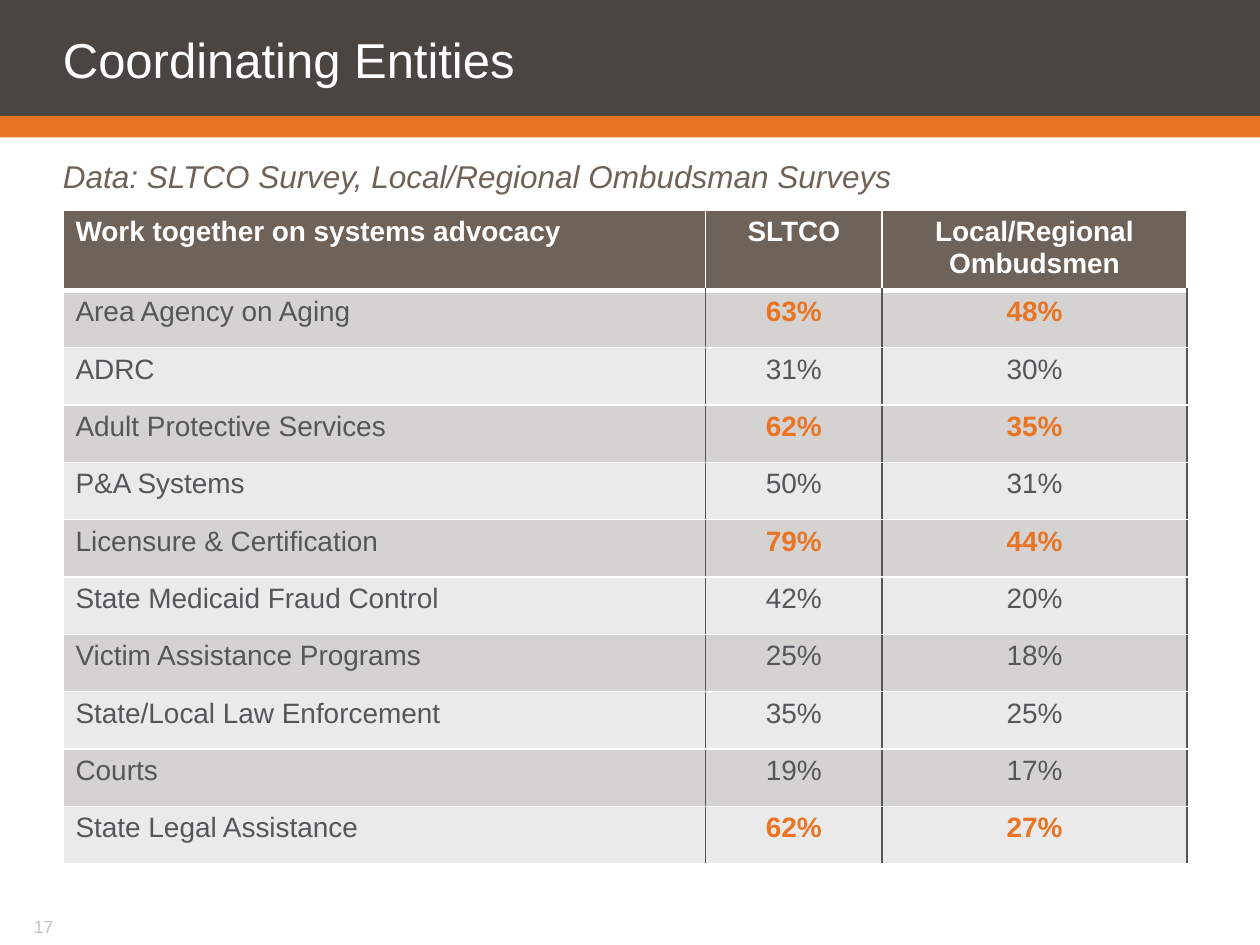
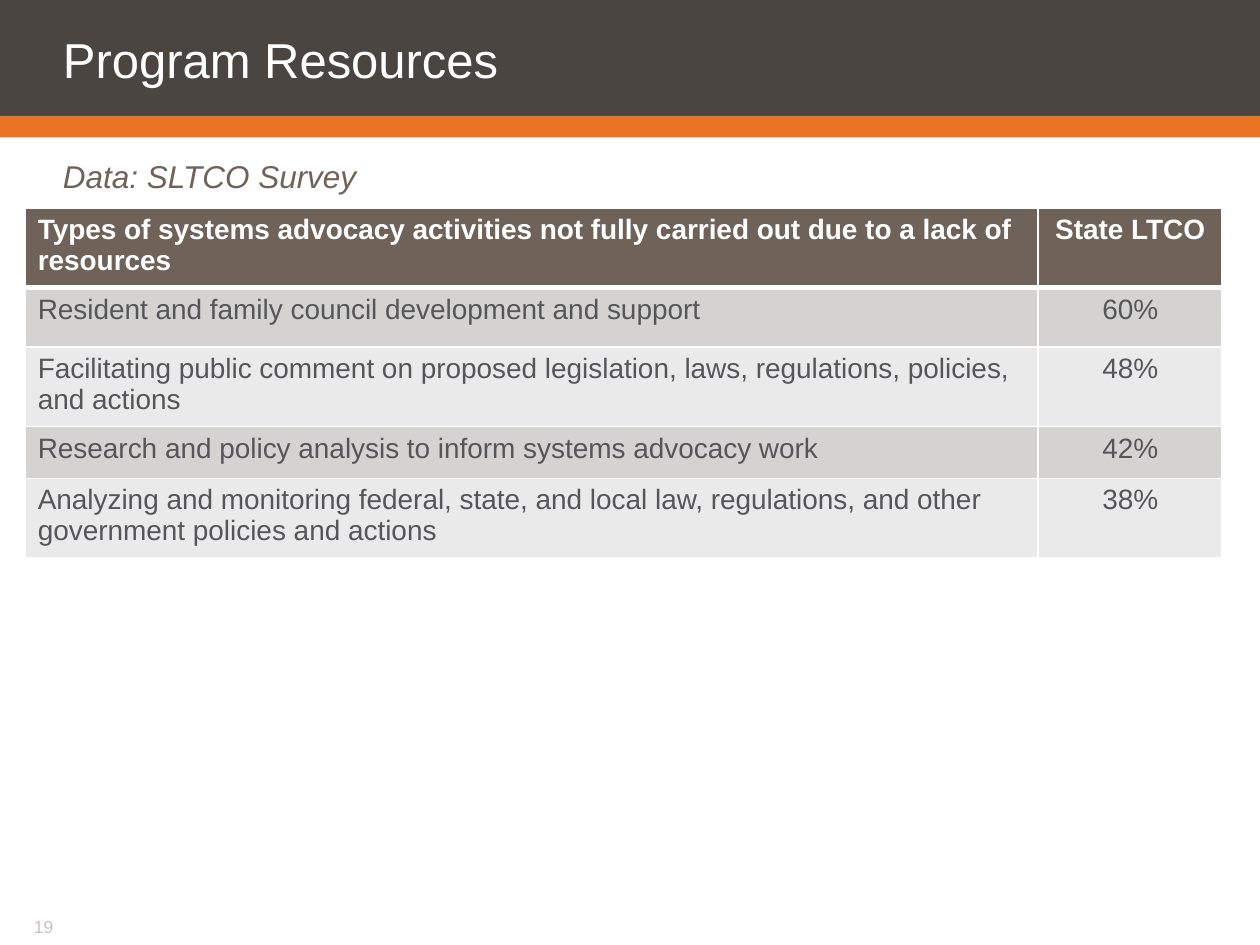
import pptx
import pptx.dml.color
import pptx.enum.shapes
import pptx.enum.text
import pptx.oxml.ns
import pptx.util
from lxml import etree

Inches = pptx.util.Inches
Pt = pptx.util.Pt
FONT = "Arial"
COLORS = {
    "title_band": "4A4541",
    "accent": "E87424",
    "header": "6E6259",
    "body_text": "55565A",
    "odd_row": "D5D3D1",
    "even_row": "EBEAEA",
    "page_number": "C8C2BF",
    "white": "FFFFFF",
}

ENTITIES_HEADER = ("Work together on systems advocacy", "SLTCO", "Local/Regional Ombudsmen")
ENTITIES = [
    ("Area Agency on Aging", "63%", "48%"),
    ("ADRC", "31%", "30%"),
    ("Adult Protective Services", "62%", "35%"),
    ("P&A Systems", "50%", "31%"),
    ("Licensure & Certification", "79%", "44%"),
    ("State Medicaid Fraud Control", "42%", "20%"),
    ("Victim Assistance Programs", "25%", "18%"),
    ("State/Local Law Enforcement", "35%", "25%"),
    ("Courts", "19%", "17%"),
    ("State Legal Assistance", "62%", "27%"),
]
HIGHLIGHTED_ENTITIES = {
    "Area Agency on Aging",
    "Adult Protective Services",
    "Licensure & Certification",
    "State Legal Assistance",
}

RESOURCES_HEADER = (
    "Types of systems advocacy activities not fully carried out due to a lack of resources",
    "State LTCO",
)
RESOURCES = [
    ("Resident and family council development and support", "60%"),
    ("Facilitating public comment on proposed legislation, laws, regulations, policies, "
     "and actions", "48%"),
    ("Research and policy analysis to inform systems advocacy work", "42%"),
    ("Analyzing and monitoring federal, state, and local law, regulations, and other "
     "government policies and actions", "38%"),
]


def rgb(color):
    return pptx.dml.color.RGBColor.from_string(COLORS[color])


def add_run(paragraph, text, size, color, bold=False, italic=False):
    run = paragraph.add_run()
    run.text = text
    run.font.name = FONT
    run.font.size = Pt(size)
    run.font.bold = bold
    run.font.italic = italic
    run.font.color.rgb = rgb(color)


def add_band(slide, top, height, color):
    band = slide.shapes.add_shape(
        pptx.enum.shapes.MSO_SHAPE.RECTANGLE, 0, Inches(top), Inches(10), Inches(height))
    band.shadow.inherit = False
    band.fill.solid()
    band.fill.fore_color.rgb = rgb(color)
    band.line.fill.background()


def add_text(slide, box, insets, text, size, color, italic=False):
    """Add one line of text; box is left, top, width, height, insets go clockwise from left."""
    shape = slide.shapes.add_textbox(*map(Inches, box))
    frame = shape.text_frame
    frame.word_wrap = True
    (frame.margin_left, frame.margin_top,
     frame.margin_right, frame.margin_bottom) = map(Inches, insets)
    add_run(frame.paragraphs[0], text, size, color, italic=italic)
    return frame


def add_base_slide(presentation, title, source, page_number):
    slide = presentation.slides.add_slide(presentation.slide_layouts[6])
    add_band(slide, 0, 0.92, "title_band")
    add_band(slide, 0.92, 0.17, "accent")
    title_frame = add_text(slide, (0, 0, 10, 0.92), (0.5, 0.1, 0.1, 0), title, 28, "white")
    title_frame.vertical_anchor = pptx.enum.text.MSO_ANCHOR.MIDDLE
    title_frame.paragraphs[0].line_spacing = Pt(28)
    add_text(slide, (0, 1.22, 10, 0.33), (0.5, 0.03, 0, 0), source, 18, "header", italic=True)
    add_text(slide, (0.17, 7.27, 1.92, 0.18), (0.1, 0, 0.1, 0.05),
             str(page_number), 10, "page_number")
    return slide


def set_border(cell, side, color="white", width=1):
    """Draw one edge of a cell; side is L, R, T or B, set in that order."""
    properties = cell._tc.get_or_add_tcPr()
    line = etree.SubElement(properties, pptx.oxml.ns.qn(f"a:ln{side}"), w=str(Pt(width)))
    fill = etree.SubElement(line, pptx.oxml.ns.qn("a:solidFill"))
    etree.SubElement(fill, pptx.oxml.ns.qn("a:srgbClr"), val=COLORS[color])


def fill_cell(cell, text, fill, color, bold, centered, left="white", right="white", bottom=1):
    set_border(cell, "L", left)
    set_border(cell, "R", right)
    set_border(cell, "T")
    set_border(cell, "B", width=bottom)
    cell.fill.solid()
    cell.fill.fore_color.rgb = rgb(fill)
    paragraph = cell.text_frame.paragraphs[0]
    if centered:
        paragraph.alignment = pptx.enum.text.PP_ALIGN.CENTER
    add_run(paragraph, text, 16, color, bold=bold)


def add_survey_table(slide, box, widths, header, rows, divider="white", highlighted=()):
    """Add a banded table; divider colours the vertical lines between body cells."""
    table = slide.shapes.add_table(len(rows) + 1, len(header), *map(Inches, box)).table
    for column, width in zip(table.columns, widths):
        column.width = Inches(width)
    for index, text in enumerate(header):
        fill_cell(table.cell(0, index), text, "header", "white", True, index > 0, bottom=3)
    for row_index, row in enumerate(rows, start=1):
        fill = "odd_row" if row_index % 2 else "even_row"
        for index, text in enumerate(row):
            bold = index > 0 and row[0] in highlighted
            fill_cell(table.cell(row_index, index), text, fill,
                      "accent" if bold else "body_text", bold, index > 0,
                      left=divider if index else "white", right=divider)
    return table


def main():
    presentation = pptx.Presentation()
    presentation.slide_width = Inches(10)
    presentation.slide_height = Inches(7.5)

    entities_slide = add_base_slide(
        presentation, "Coordinating Entities",
        "Data: SLTCO Survey, Local/Regional Ombudsman Surveys", 17)
    add_survey_table(entities_slide, (0.5, 1.67, 8.92, 5.01), (5.1, 1.4, 2.42),
                     ENTITIES_HEADER, ENTITIES, "body_text", HIGHLIGHTED_ENTITIES)

    resources_slide = add_base_slide(presentation, "Program Resources", "Data: SLTCO Survey", 19)
    resources_table = add_survey_table(resources_slide, (0.2, 1.65, 9.5, 2.05), (8.04, 1.46),
                                       RESOURCES_HEADER, RESOURCES)
    resources_table.rows[1].height = Inches(0.47)

    presentation.save("out.pptx")


if __name__ == "__main__":
    main()
